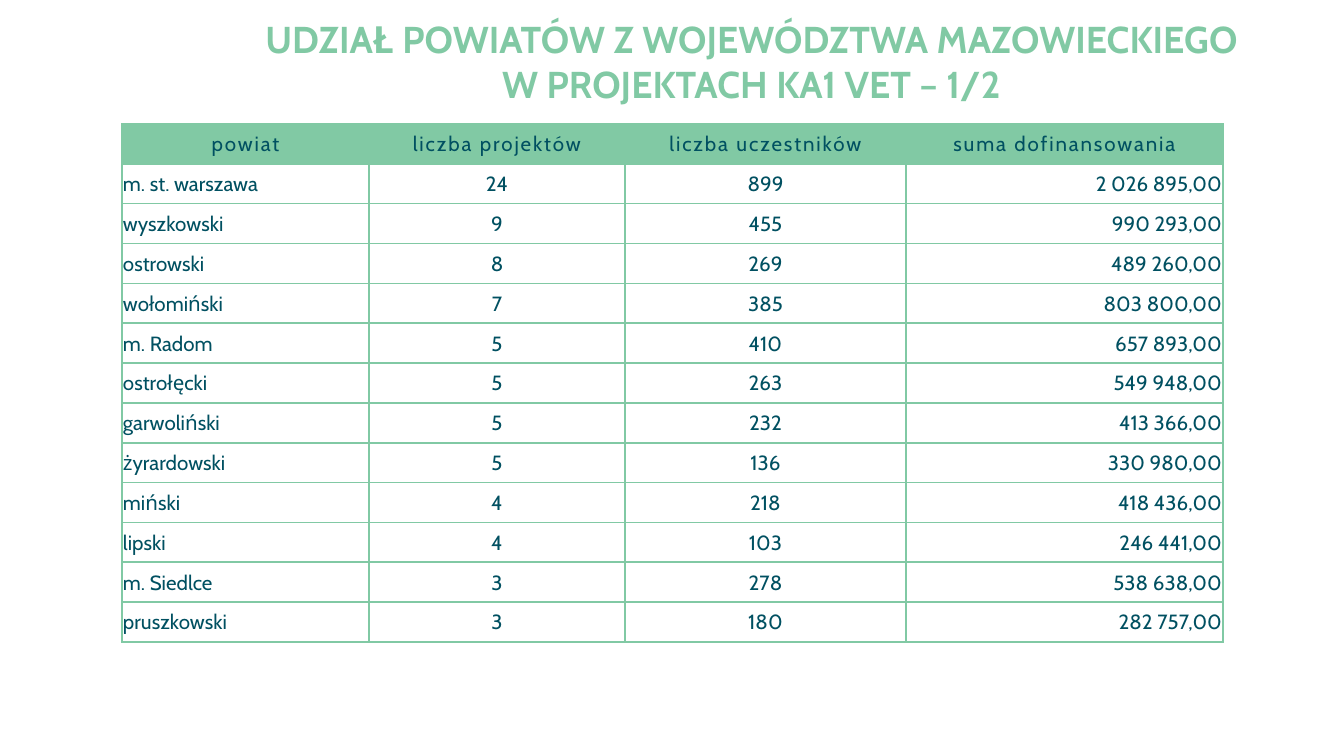
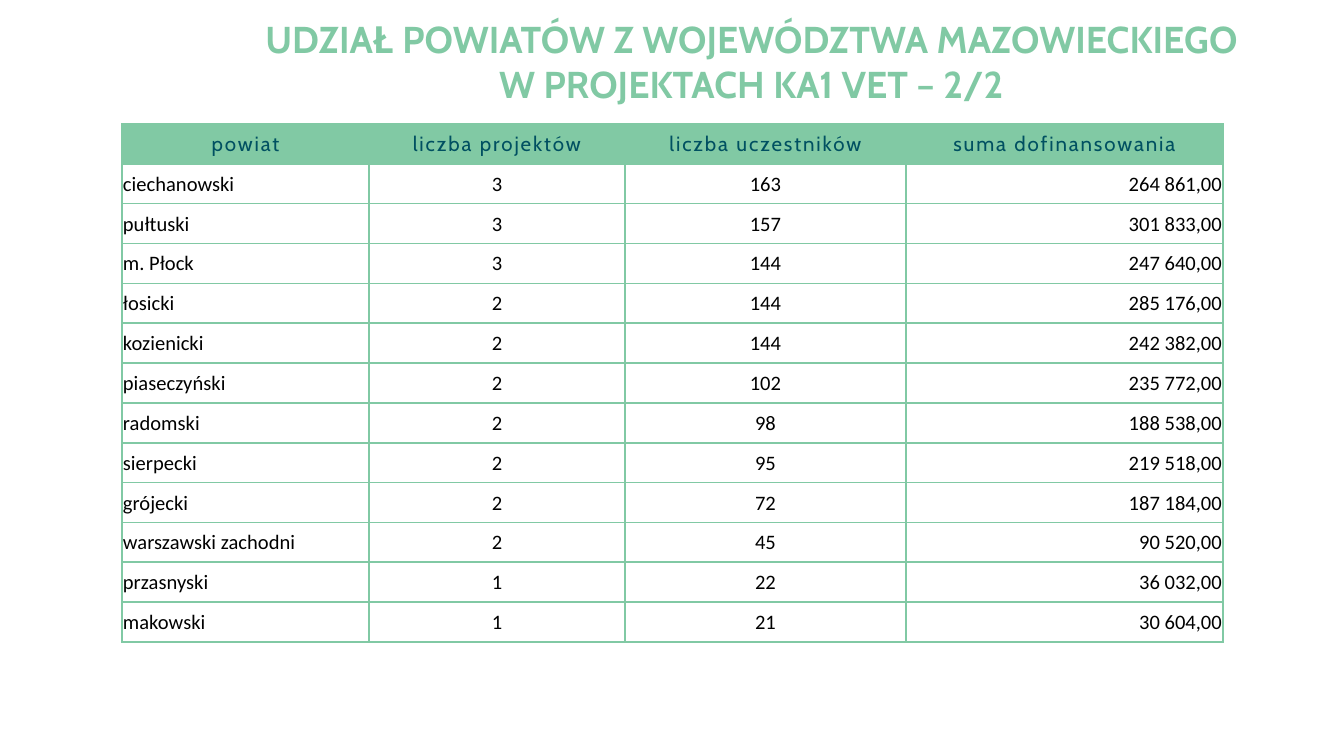
from dataclasses import dataclass

from lxml import etree
from pptx import Presentation, util as u
from pptx.dml.color import RGBColor
from pptx.enum import text
from pptx.oxml import ns

PX_PER_INCH = 134.4


def px(length):
    return u.Emu(round(length * u.Inches(1) / PX_PER_INCH))


@dataclass(frozen=True)
class Theme:
    green: str = "81C9A4"
    navy: str = "005061"
    black: str = "000000"
    font: str = "Cabin"
    plain_font: str = "Calibri"
    title_size: int = 20
    table_size: int = 11
    border_width: int = 1
    header_spacing: int = 100  # hundredths of a point


THEME = Theme()
SLIDE_SIZE = (1344, 756)
TITLE_BOX = (249, 8, 1005, 106)
TABLE_BOX = (122, 124, 1101, 518)
COLUMN_WIDTHS = (247, 256, 281, 317)
LEFT, CENTER, RIGHT = (text.PP_ALIGN.LEFT, text.PP_ALIGN.CENTER,
                       text.PP_ALIGN.RIGHT)
COLUMN_ALIGNS = (LEFT, CENTER, CENTER, RIGHT)

TITLE_START = "UDZIAŁ POWIATÓW Z WOJEWÓDZTWA MAZOWIECKIEGO"
TITLE_END = "W PROJEKTACH KA1 VET – "
HEADINGS = ("powiat", "liczba projektów", "liczba uczestników",
            "suma dofinansowania")

LARGER_COUNTIES = (
    ("m. st. warszawa", 24, 899, "2 026 895,00"),
    ("wyszkowski", 9, 455, "990 293,00"),
    ("ostrowski", 8, 269, "489 260,00"),
    ("wołomiński", 7, 385, "803 800,00"),
    ("m. Radom", 5, 410, "657 893,00"),
    ("ostrołęcki", 5, 263, "549 948,00"),
    ("garwoliński", 5, 232, "413 366,00"),
    ("żyrardowski", 5, 136, "330 980,00"),
    ("miński", 4, 218, "418 436,00"),
    ("lipski", 4, 103, "246 441,00"),
    ("m. Siedlce", 3, 278, "538 638,00"),
    ("pruszkowski", 3, 180, "282 757,00"),
)
SMALLER_COUNTIES = (
    ("ciechanowski", 3, 163, "264 861,00"),
    ("pułtuski", 3, 157, "301 833,00"),
    ("m. Płock", 3, 144, "247 640,00"),
    ("łosicki", 2, 144, "285 176,00"),
    ("kozienicki", 2, 144, "242 382,00"),
    ("piaseczyński", 2, 102, "235 772,00"),
    ("radomski", 2, 98, "188 538,00"),
    ("sierpecki", 2, 95, "219 518,00"),
    ("grójecki", 2, 72, "187 184,00"),
    ("warszawski zachodni", 2, 45, "90 520,00"),
    ("przasnyski", 1, 22, "36 032,00"),
    ("makowski", 1, 21, "30 604,00"),
)


def add_run(paragraph, words, size, font, color, bold=False):
    run = paragraph.add_run()
    run.text = words
    run.font.size = u.Pt(size)
    run.font.name = font
    run.font.bold = bold
    run.font.color.rgb = RGBColor.from_string(color)
    return run


def add_borders(cell):
    properties = cell._tc.get_or_add_tcPr()
    for side in ("lnL", "lnR", "lnT", "lnB"):
        line = etree.SubElement(properties, ns.qn(f"a:{side}"),
                                w=str(u.Pt(THEME.border_width)))
        fill = etree.SubElement(line, ns.qn("a:solidFill"))
        etree.SubElement(fill, ns.qn("a:srgbClr"), val=THEME.green)


def fill_cell(cell, words, align, font, color, heading=False):
    cell.margin_left = cell.margin_right = cell.margin_top = px(1)
    cell.margin_bottom = 0
    cell.vertical_anchor = text.MSO_ANCHOR.MIDDLE
    add_borders(cell)
    if heading:
        cell.fill.solid()
        cell.fill.fore_color.rgb = RGBColor.from_string(THEME.green)
    else:
        cell.fill.background()
    paragraph = cell.text_frame.paragraphs[0]
    paragraph.alignment = align
    run = add_run(paragraph, words, THEME.table_size, font, color)
    if heading:
        run.font._element.set("spc", str(THEME.header_spacing))


def add_title(slide, box, part):
    frame = slide.shapes.add_textbox(*map(px, box)).text_frame
    frame.word_wrap = True
    frame.vertical_anchor = text.MSO_ANCHOR.MIDDLE
    frame.margin_left = frame.margin_right = 0
    paragraph = frame.paragraphs[0]
    paragraph.alignment = CENTER
    style = (THEME.title_size, THEME.font, THEME.green, True)
    add_run(paragraph, TITLE_START, *style)
    paragraph.add_line_break()
    add_run(paragraph, TITLE_END + part, *style)


def add_county_table(slide, box, counties, font, color):
    row_count = len(counties) + 1
    table = slide.shapes.add_table(row_count, len(HEADINGS),
                                   *map(px, box)).table
    table.first_row = table.horz_banding = False
    for column, width in zip(table.columns, COLUMN_WIDTHS):
        column.width = px(width)
    for row in table.rows:
        row.height = px(box[3] / row_count)

    # Heading row
    for column, heading in enumerate(HEADINGS):
        fill_cell(table.cell(0, column), heading, CENTER,
                  THEME.font, THEME.navy, heading=True)

    # One row per county
    for row, county in enumerate(counties, start=1):
        for column, value in enumerate(county):
            fill_cell(table.cell(row, column), str(value),
                      COLUMN_ALIGNS[column], font, color)


def add_county_slide(deck, part, counties, font, color):
    slide = deck.slides.add_slide(deck.slide_layouts[6])
    add_title(slide, TITLE_BOX, part)
    add_county_table(slide, TABLE_BOX, counties, font, color)


def main():
    deck = Presentation()
    deck.slide_width, deck.slide_height = map(px, SLIDE_SIZE)
    add_county_slide(deck, "1/2", LARGER_COUNTIES, THEME.font, THEME.navy)
    add_county_slide(deck, "2/2", SMALLER_COUNTIES,
                     THEME.plain_font, THEME.black)
    deck.save("out.pptx")


if __name__ == "__main__":
    main()
